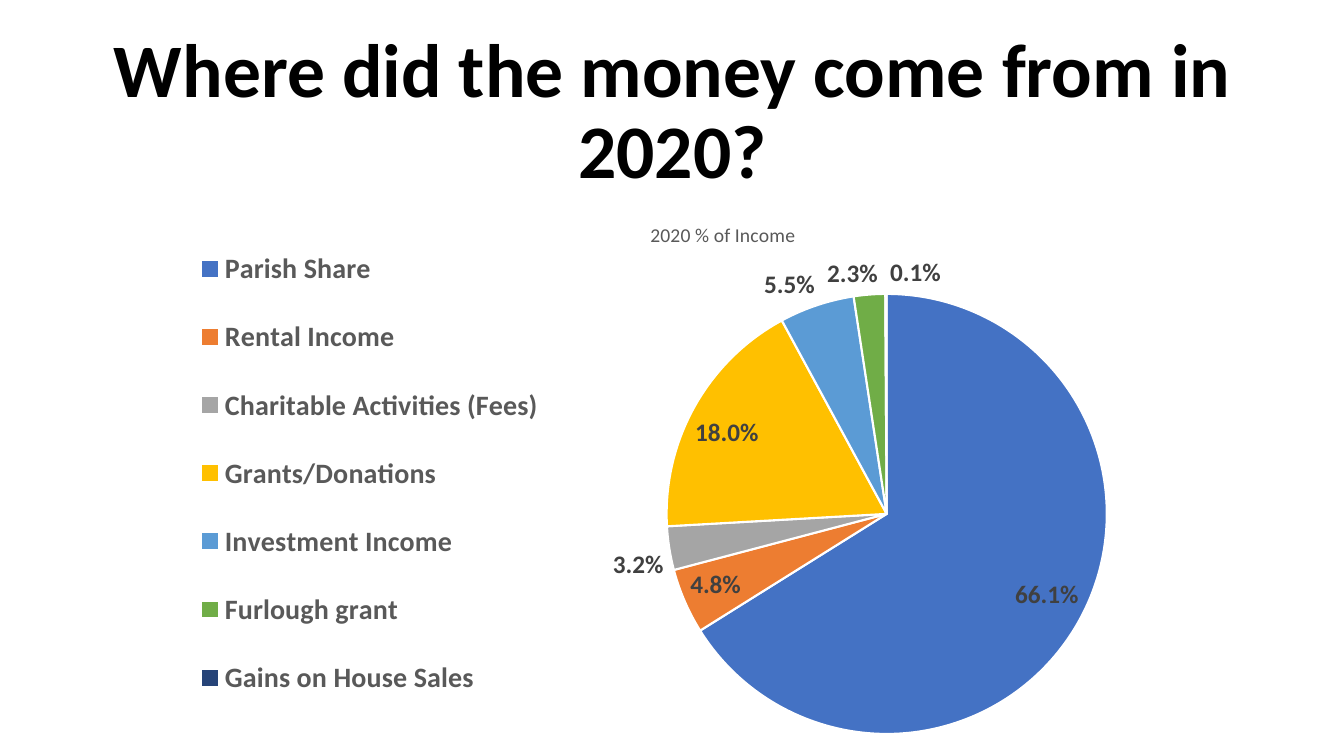
"""Build a slide showing the 2020 income sources as a pie chart."""
from lxml.etree import SubElement
from pptx import Presentation
from pptx.chart.data import CategoryChartData
from pptx.dml.color import RGBColor
from pptx.enum.chart import XL_CHART_TYPE, XL_LABEL_POSITION, XL_LEGEND_POSITION
from pptx.enum.text import MSO_ANCHOR, PP_ALIGN
from pptx.oxml.ns import qn
from pptx.util import Inches, Pt

HEADING = "Where did the money come from in 2020?"
SERIES = "2020 % of Income"
INCOME = [
    ("Parish Share", 0.661, "4472C4"),
    ("Rental Income", 0.048, "ED7D31"),
    ("Charitable Activities (Fees)", 0.032, "A5A5A5"),
    ("Grants/Donations", 0.18, "FFC000"),
    ("Investment Income", 0.055, "5B9BD5"),
    ("Furlough grant", 0.023, "70AD47"),
    ("Gains on House Sales", 0.001, "264478"),
]
COLOURS = {"heading": "000000", "muted": "595959", "label": "404040", "edge": "FFFFFF"}
FONT = "Calibri"
HEADING_AREA = (0.92, 0.4, 11.5, 1.45)
CHART_AREA = (0.92, 2, 12.5, 5.39)
PLOT_SHARE = (0.36, 0.17, 0.54, 0.81)
LEGEND_SHARE = (0.07, 0.03, 0.3, 0.94)


def style_font(font, size, colour, bold):
    font.name = FONT
    font.size = Pt(size)
    font.bold = bold
    font.color.rgb = RGBColor.from_string(COLOURS[colour])


def set_layout(element, shares, inner=False):
    layout = element.find(qn("c:layout"))
    if layout is None:
        layout = SubElement(element, qn("c:layout"))
        if inner:
            element.insert(0, layout)
        else:
            element.find(qn("c:legendPos")).addnext(layout)
    for child in list(layout):
        layout.remove(child)
    manual = SubElement(layout, qn("c:manualLayout"))
    settings = [("layoutTarget", "inner")] if inner else []
    settings += [("xMode", "edge"), ("yMode", "edge")]
    settings += zip("xywh", map(str, shares))
    for name, value in settings:
        SubElement(manual, qn(f"c:{name}")).set("val", value)


def add_heading(page):
    box = page.shapes.add_textbox(*map(Inches, HEADING_AREA))
    frame = box.text_frame
    frame.word_wrap = True
    frame.vertical_anchor = MSO_ANCHOR.MIDDLE
    para = frame.paragraphs[0]
    para.alignment = PP_ALIGN.CENTER
    para.line_spacing = 0.9
    span = para.add_run()
    span.text = HEADING
    style_font(span.font, 54, "heading", True)


def add_income_chart(page):
    names, values, fills = zip(*INCOME)
    data = CategoryChartData(number_format="0.0%")
    data.categories = names
    data.add_series(SERIES, values)
    chart = page.shapes.add_chart(XL_CHART_TYPE.PIE, *map(Inches, CHART_AREA), data).chart
    style_font(chart.font, 10, "heading", False)

    chart.has_title = True
    span = chart.chart_title.text_frame.paragraphs[0].add_run()
    span.text = SERIES
    style_font(span.font, 14, "muted", False)

    chart.has_legend = True
    legend = chart.legend
    legend.position = XL_LEGEND_POSITION.BOTTOM
    legend.include_in_layout = False
    style_font(legend.font, 20, "muted", True)
    chart_element = chart.element.find(qn("c:chart"))
    set_layout(chart_element.find(qn("c:legend")), LEGEND_SHARE)
    set_layout(chart_element.find(qn("c:plotArea")), PLOT_SHARE, inner=True)

    plot = chart.plots[0]
    plot.vary_by_categories = True
    series = plot.series[0]
    for index, fill in enumerate(fills):
        style = series.points[index].format
        style.fill.solid()
        style.fill.fore_color.rgb = RGBColor.from_string(fill)
        style.line.width = Pt(1.5)
        style.line.color.rgb = RGBColor.from_string(COLOURS["edge"])

    labels = series.data_labels
    labels.show_value = True
    labels.number_format = "0.0%"
    labels.number_format_is_linked = False
    labels.position = XL_LABEL_POSITION.BEST_FIT
    style_font(labels.font, 18, "label", True)


def main():
    deck = Presentation()
    deck.slide_width, deck.slide_height = Inches(13.33), Inches(7.5)
    page = deck.slides.add_slide(deck.slide_layouts[6])
    add_heading(page)
    add_income_chart(page)
    deck.save("out.pptx")


if __name__ == "__main__":
    main()
